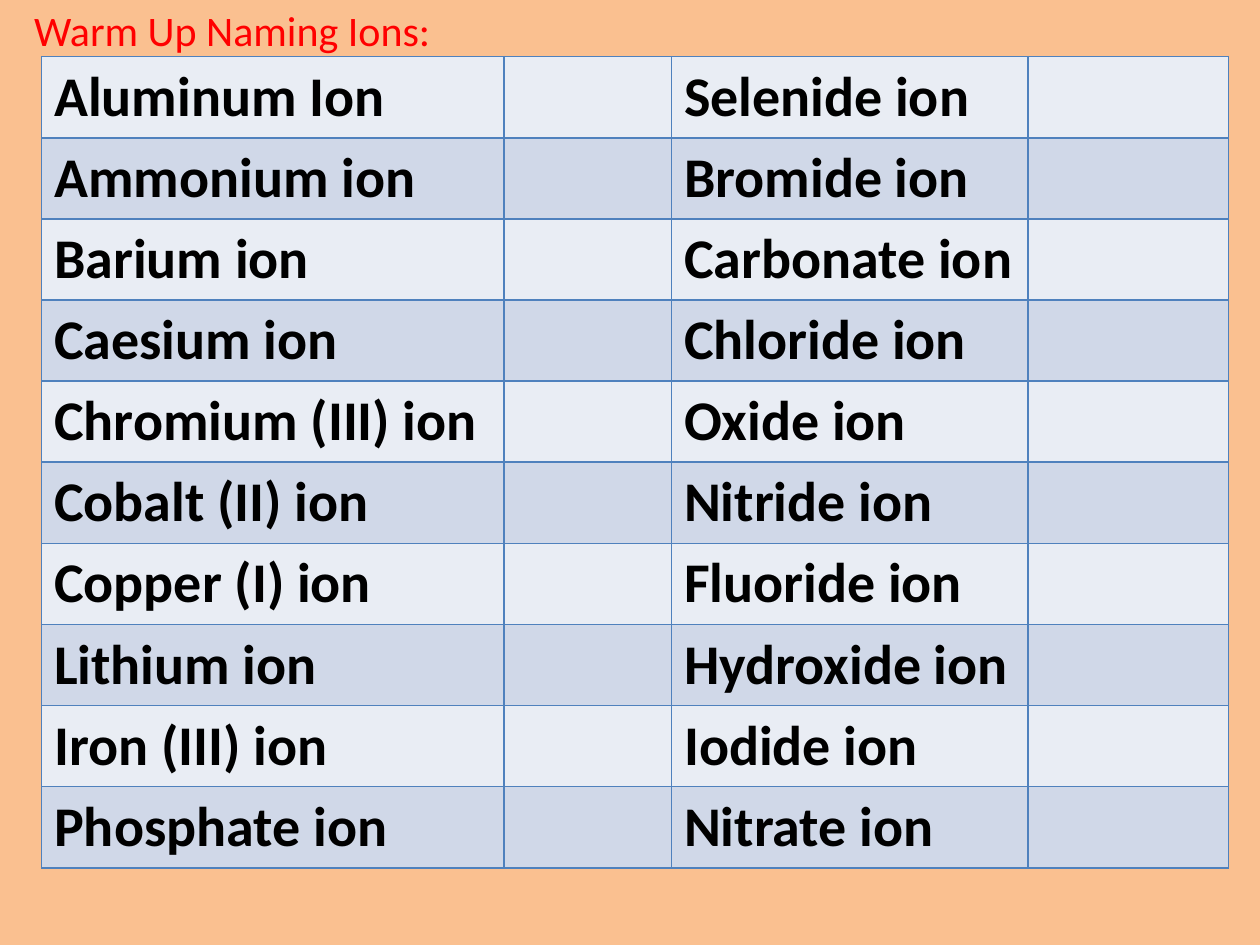
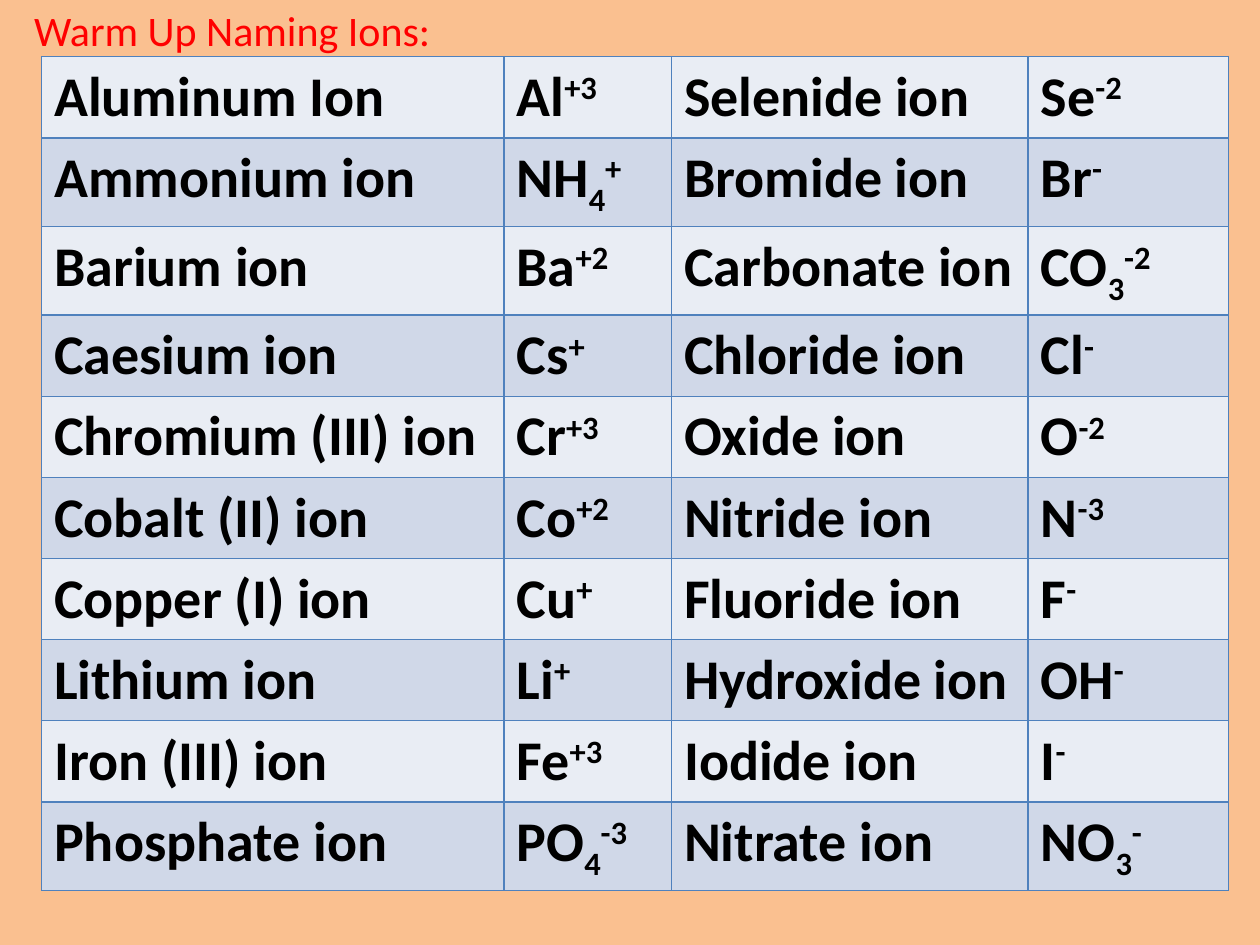
import pptx
import pptx.dml.color
import pptx.enum.text
import pptx.oxml
import pptx.oxml.ns
import pptx.util

Inches = pptx.util.Inches
Pt = pptx.util.Pt
RGBColor = pptx.dml.color.RGBColor

# Shared look
PEACH = RGBColor(0xFA, 0xC0, 0x90)
RED = RGBColor(0xFF, 0x00, 0x00)
BLACK = RGBColor(0x00, 0x00, 0x00)
BLUE = RGBColor(0x4F, 0x81, 0xBD)
BANDS = (RGBColor(0xE9, 0xED, 0xF4), RGBColor(0xD0, 0xD8, 0xE8))
FONT = "Calibri"
TITLE = "Warm Up Naming Ions:"
COL_WIDTHS = (3.67, 1.33, 2.83, 1.59)
ROW_HEIGHT = 0.63
BASELINES = (0, -25000, 30000)  # symbol, subscript, charge

# Each ion: name, (symbol, subscript, charge)
LEFT_IONS = [
    ("Aluminum Ion", ("Al", "", "+3")),
    ("Ammonium ion", ("NH", "4", "+")),
    ("Barium ion", ("Ba", "", "+2")),
    ("Caesium ion", ("Cs", "", "+")),
    ("Chromium (III) ion", ("Cr", "", "+3")),
    ("Cobalt (II) ion", ("Co", "", "+2")),
    ("Copper (I) ion", ("Cu", "", "+")),
    ("Lithium ion", ("Li", "", "+")),
    ("Iron (III) ion", ("Fe", "", "+3")),
    ("Phosphate ion", ("PO", "4", "-3")),
]
RIGHT_IONS = [
    ("Selenide ion", ("Se", "", "-2")),
    ("Bromide ion", ("Br", "", "-")),
    ("Carbonate ion", ("CO", "3", "-2")),
    ("Chloride ion", ("Cl", "", "-")),
    ("Oxide ion", ("O", "", "-2")),
    ("Nitride ion", ("N", "", "-3")),
    ("Fluoride ion", ("F", "", "-")),
    ("Hydroxide ion", ("OH", "", "-")),
    ("Iodide ion", ("I", "", "-")),
    ("Nitrate ion", ("NO", "3", "-")),
]


def add_run(p, text, size, color, bold=False, baseline=0):
    r = p.add_run()
    r.text = text
    r.font.name = FONT
    r.font.size = Pt(size)
    r.font.bold = bold
    r.font.color.rgb = color
    if baseline:
        r._r.get_or_add_rPr().set("baseline", str(baseline))


def add_plain_table(slide, left, top, col_widths, rows, row_height):
    table = slide.shapes.add_table(
        rows, len(col_widths), Inches(left), Inches(top),
        Inches(sum(col_widths)), Inches(row_height * rows)).table
    table.first_row = False
    table.horz_banding = False
    for column, width in zip(table.columns, col_widths):
        column.width = Inches(width)
    for row in table.rows:
        row.height = Inches(row_height)
    return table


def style_cell(cell, fill=None, border=None):
    # Borders come before the fill in the cell properties
    line = "<a:noFill/>"
    if border is not None:
        line = f'<a:solidFill><a:srgbClr val="{border}"/></a:solidFill>'
    tcPr = cell._tc.get_or_add_tcPr()
    for side in "LRTB":
        tcPr.append(pptx.oxml.parse_xml(
            f'<a:ln{side} {pptx.oxml.ns.nsdecls("a")} w="{Pt(1)}">'
            f'{line}</a:ln{side}>'))
    if fill is None:
        cell.fill.background()
    else:
        cell.fill.solid()
        cell.fill.fore_color.rgb = fill


def add_title_table(slide):
    cell = add_plain_table(slide, 0.17, 0, (9,), 1, 0.9).cell(0, 0)
    style_cell(cell)
    cell.vertical_anchor = pptx.enum.text.MSO_ANCHOR.TOP
    cell.margin_top = Inches(0.05)
    add_run(cell.text_frame.paragraphs[0], TITLE, 24, RED)


def fill_cell(cell, parts):
    p = cell.text_frame.paragraphs[0]
    for text, baseline in zip(parts, BASELINES):
        if text:
            add_run(p, text, 32, BLACK, True, baseline)


def add_ion_table(slide, with_answers):
    table = add_plain_table(
        slide, 0.33, 0.45, COL_WIDTHS, len(LEFT_IONS), ROW_HEIGHT)
    for i, ions in enumerate(zip(LEFT_IONS, RIGHT_IONS)):
        for j in range(len(COL_WIDTHS)):
            style_cell(table.cell(i, j), BANDS[i % 2], BLUE)
        for k, (name, formula) in enumerate(ions):
            fill_cell(table.cell(i, 2 * k), (name,))
            if with_answers:
                fill_cell(table.cell(i, 2 * k + 1), formula)


def add_ion_slide(prs, with_answers):
    slide = prs.slides.add_slide(prs.slide_layouts.get_by_name("Blank"))
    slide.background.fill.solid()
    slide.background.fill.fore_color.rgb = PEACH
    add_title_table(slide)
    add_ion_table(slide, with_answers)


def main():
    prs = pptx.Presentation()
    prs.slide_width, prs.slide_height = Inches(10), Inches(7.5)
    # Questions first, then the same table with answers
    for with_answers in (False, True):
        add_ion_slide(prs, with_answers)
    prs.save("out.pptx")


if __name__ == "__main__":
    main()
